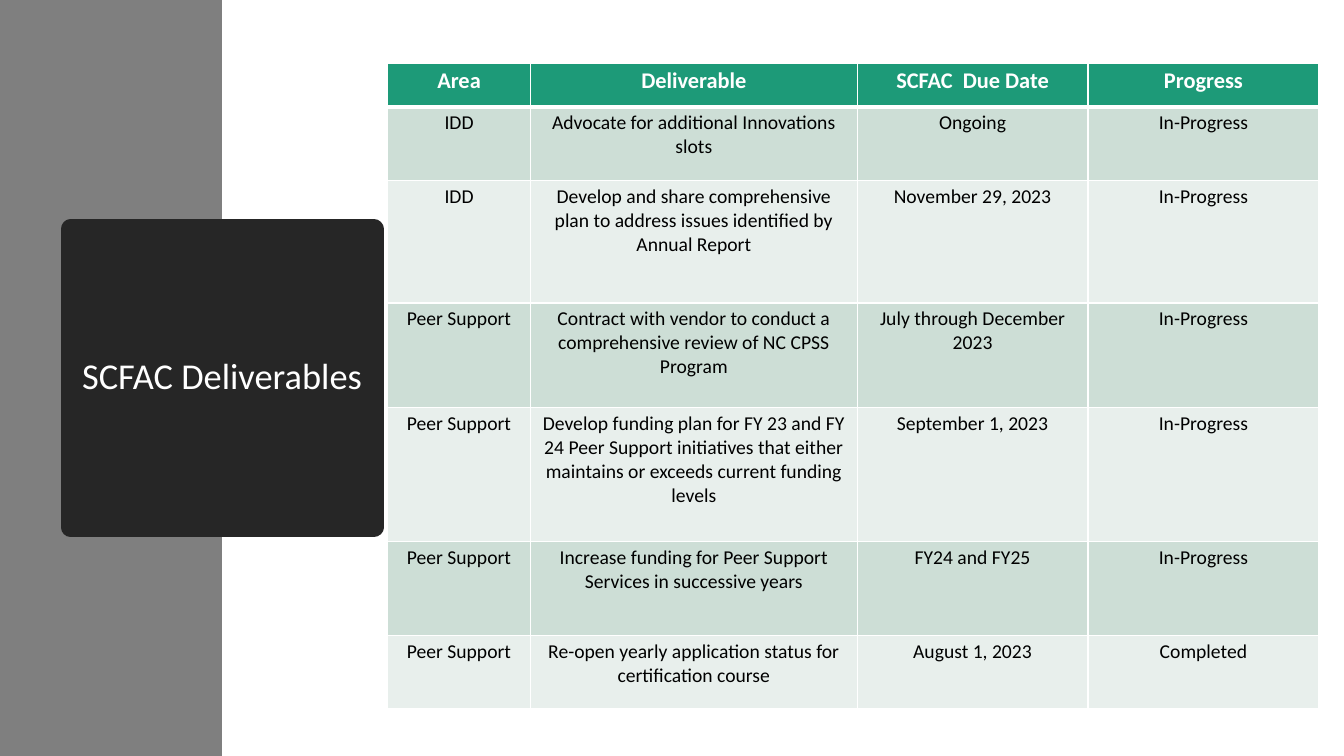
from dataclasses import astuple, dataclass

from lxml.etree import SubElement
from pptx import Presentation
from pptx.dml.color import RGBColor
from pptx.enum.shapes import MSO_SHAPE
from pptx.enum.text import MSO_ANCHOR, PP_ALIGN
from pptx.oxml.ns import qn
from pptx.slide import Slide
from pptx.table import _Cell
from pptx.text.text import _Paragraph
from pptx.util import Pt

FONT = "Calibri"
WHITE, BLACK = "FFFFFF", "000000"
PANEL_GRAY, TITLE_DARK = "7F7F7F", "262626"
HEADER_GREEN = "1D9A78"
BANDS = ("CDDED6", "E8EFEC")
COLUMN_WIDTHS = (102.2, 233.3, 164.9, 164.9)


@dataclass(frozen=True)
class Deliverable:
    area: str
    task: str
    due: str
    progress: str


@dataclass(frozen=True)
class RowStyle:
    fill: str
    color: str
    size: float
    bold: bool
    top_border: float
    bottom_border: float


HEADINGS = Deliverable("Area", "Deliverable", "SCFAC  Due Date", "Progress")
DELIVERABLES = (
    (52.5, Deliverable("IDD", "Advocate for additional Innovations slots",
                       "Ongoing", "In-Progress")),
    (87.5, Deliverable("IDD", "Develop and share comprehensive plan to address issues "
                       "identified by Annual Report", "November 29, 2023", "In-Progress")),
    (74.8, Deliverable("Peer Support", "Contract with vendor to conduct a comprehensive "
                       "review of NC CPSS Program", "July through December 2023", "In-Progress")),
    (95.6, Deliverable("Peer Support", "Develop funding plan for FY 23 and FY 24 Peer Support "
                       "initiatives that either maintains or exceeds current funding levels",
                       "September 1, 2023", "In-Progress")),
    (67, Deliverable("Peer Support", "Increase funding for Peer Support Services in "
                     "successive years", "FY24 and FY25", "In-Progress")),
    (52.5, Deliverable("Peer Support", "Re-open yearly application status for "
                       "certification course", "August 1, 2023", "Completed")),
)


def rgb(color: str) -> RGBColor:
    return RGBColor.from_string(color)


def format_paragraph(paragraph: _Paragraph, size: float, color: str, bold: bool = False) -> None:
    paragraph.alignment = PP_ALIGN.CENTER
    paragraph.font.name = FONT
    paragraph.font.size = Pt(size)
    paragraph.font.bold = bold
    paragraph.font.color.rgb = rgb(color)


def add_borders(cell: _Cell, top: float, bottom: float) -> None:
    properties = cell._tc.get_or_add_tcPr()
    sides = (("a:lnL", 1), ("a:lnR", 1), ("a:lnT", top), ("a:lnB", bottom))
    for position, (side, width) in enumerate(sides):
        border = SubElement(properties, qn(side), w=str(Pt(width)))
        SubElement(SubElement(border, qn("a:solidFill")), qn("a:srgbClr"), val=WHITE)
        properties.insert(position, border)


def fill_cell(cell: _Cell, text: str, style: RowStyle) -> None:
    cell.text = text
    cell.margin_left = cell.margin_right = Pt(6.75)
    cell.margin_top = cell.margin_bottom = Pt(3)
    cell.fill.solid()
    cell.fill.fore_color.rgb = rgb(style.fill)
    format_paragraph(cell.text_frame.paragraphs[0], style.size, style.color, style.bold)
    add_borders(cell, style.top_border, style.bottom_border)


def add_title(slide: Slide) -> None:
    title = slide.shapes.title
    title.left, title.top, title.width, title.height = Pt(50.4), Pt(163.5), Pt(216.7), Pt(213.1)
    title.fill.solid()
    title.fill.fore_color.rgb = rgb(TITLE_DARK)
    title.line.color.rgb = rgb(TITLE_DARK)
    title.line.width = Pt(13.75)
    title.text_frame.text = "SCFAC Deliverables"
    title.text_frame.word_wrap = True
    title.text_frame.vertical_anchor = MSO_ANCHOR.MIDDLE
    heading = title.text_frame.paragraphs[0]
    heading.line_spacing = 0.9
    format_paragraph(heading, 26, WHITE)


def add_side_panel(slide: Slide, height: float) -> None:
    panel = slide.shapes.add_shape(MSO_SHAPE.RECTANGLE, 0, 0, Pt(158.6), Pt(height))
    panel.shadow.inherit = False
    panel.fill.solid()
    panel.fill.fore_color.rgb = rgb(PANEL_GRAY)
    panel.line.fill.background()
    slide.shapes.title.element.addprevious(panel.element)


def add_deliverables(slide: Slide) -> None:
    rows = ((31.5, HEADINGS), *DELIVERABLES)
    table = slide.shapes.add_table(
        len(rows), len(COLUMN_WIDTHS), Pt(276.8), Pt(45),
        Pt(sum(COLUMN_WIDTHS)), Pt(sum(height for height, _ in rows))).table
    for column, width in zip(table.columns, COLUMN_WIDTHS):
        column.width = Pt(width)
    for index, (height, deliverable) in enumerate(rows):
        table.rows[index].height = Pt(height)
        if index == 0:
            style = RowStyle(HEADER_GREEN, WHITE, 16, True, 1, 3)
        else:
            style = RowStyle(BANDS[(index - 1) % 2], BLACK, 14, False, 3 if index == 1 else 1, 1)
        for cell, text in zip(table.rows[index].cells, astuple(deliverable)):
            fill_cell(cell, text, style)


def main() -> None:
    presentation = Presentation()
    presentation.slide_width, presentation.slide_height = Pt(960), Pt(540)
    slide = presentation.slides.add_slide(presentation.slide_layouts.get_by_name("Title Only"))
    add_title(slide)
    add_side_panel(slide, 540)
    add_deliverables(slide)
    presentation.save("out.pptx")


if __name__ == "__main__":
    main()
